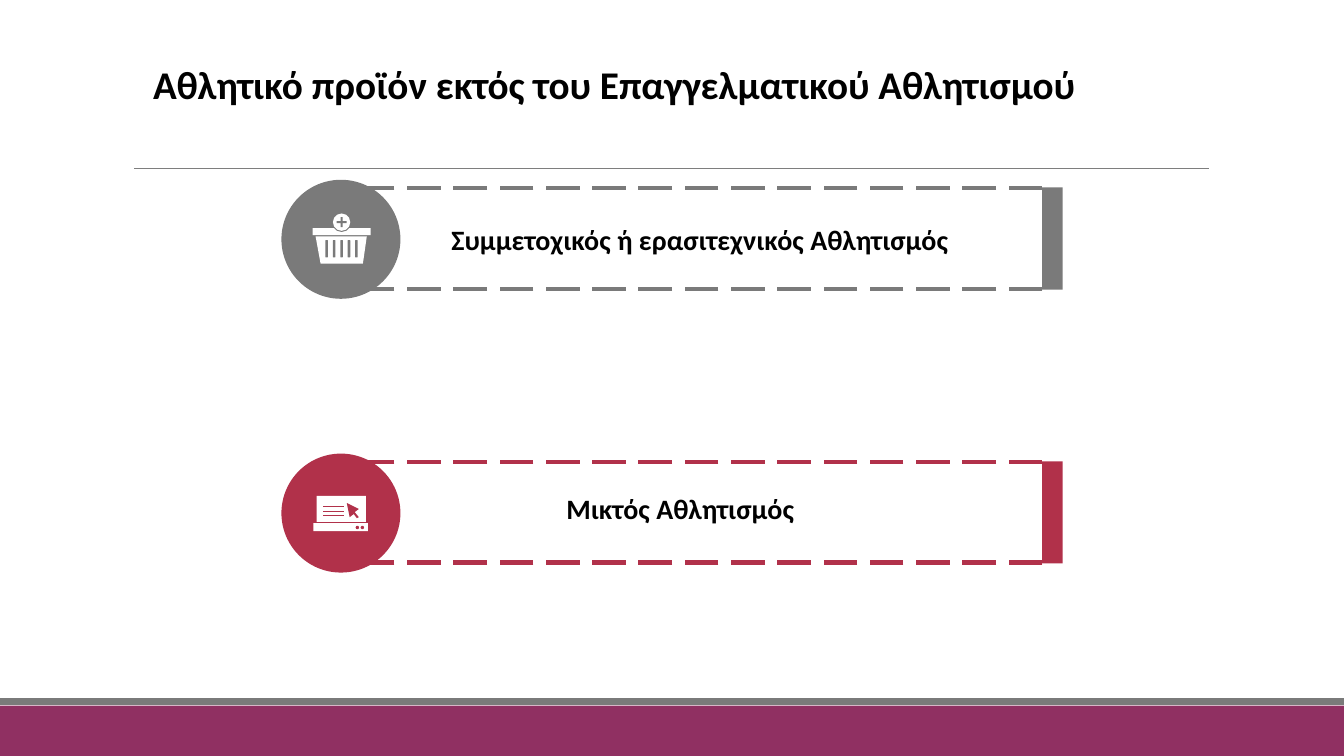
import pptx
import pptx.util
import pptx.dml.color
import pptx.enum.dml
import pptx.enum.shapes
import pptx.enum.text
import pptx.oxml

Pt = pptx.util.Pt
RGB = pptx.dml.color.RGBColor
Kind = pptx.enum.shapes.MSO_SHAPE

BLACK = RGB(0x00, 0x00, 0x00)
WHITE = RGB(0xFF, 0xFF, 0xFF)
GRAY = RGB(0x7A, 0x7A, 0x7A)
RULE = RGB(0x7E, 0x7E, 0x7E)
RED = RGB(0xB1, 0x31, 0x4A)
PLUM = RGB(0x90, 0x30, 0x62)


class Page:
    def __init__(self, slide, font):
        self.shapes = slide.shapes
        self.font = font

    def paint(self, shape, color):
        shape.shadow.inherit = False
        shape.fill.solid()
        shape.fill.fore_color.rgb = color
        shape.line.fill.background()
        return shape

    def block(self, x, y, w, h, color, kind=Kind.RECTANGLE):
        shape = self.shapes.add_shape(kind, Pt(x), Pt(y), Pt(w), Pt(h))
        return self.paint(shape, color)

    def disc(self, x, y, radius, color):
        """Circle given by its centre."""
        return self.block(x - radius, y - radius, 2 * radius, 2 * radius,
                          color, Kind.OVAL)

    def outline(self, points, color):
        start, *rest = [(Pt(x), Pt(y)) for x, y in points]
        maker = self.shapes.build_freeform(*start, scale=1.0)
        maker.add_line_segments(rest, close=True)
        return self.paint(maker.convert_to_shape(), color)

    def line(self, x1, x2, y, color, width, dash=None):
        link = self.shapes.add_connector(
            pptx.enum.shapes.MSO_CONNECTOR.STRAIGHT,
            Pt(x1), Pt(y), Pt(x2), Pt(y))
        link.line.color.rgb = color
        link.line.width = Pt(width)
        if dash:
            link.line.dash_style = dash
        props = link._element.spPr
        props.append(pptx.oxml.parse_xml(
            '<a:effectLst xmlns:a='
            '"http://schemas.openxmlformats.org/drawingml/2006/main"/>'))

    def text(self, words, *, x, y, w, h, size, color=BLACK, bold=True,
             space=0):
        box = self.shapes.add_textbox(Pt(x), Pt(y), Pt(w), Pt(h))
        frame = box.text_frame
        frame.word_wrap = True
        frame.margin_left = frame.margin_right = 0
        frame.margin_top = frame.margin_bottom = 0
        frame.vertical_anchor = pptx.enum.text.MSO_ANCHOR.MIDDLE
        run = frame.paragraphs[0].add_run()
        run.text = words
        run.font.name = self.font
        run.font.size = Pt(size)
        run.font.bold = bold
        run.font.color.rgb = color
        if space:
            run._r.get_or_add_rPr().set("spc", str(space))

    def band(self, top, color):
        """Dashed band with a round badge and an end bar."""
        left, right, height = 262.8, 744.5, 72
        self.block(right, top - 0.3, 14.5, height + 1, color)
        self.disc(243.5, top + 36.7, 42.5, color)
        for y in (top, top + height):
            self.line(right, left, y, color, 3,
                      pptx.enum.dml.MSO_LINE.LONG_DASH)

    def basket(self, top, color):
        mid = 244
        self.outline([(225.4, top + 34.6), (262, top + 34.6),
                      (259.2, top + 54.1), (229, top + 54.1)], WHITE)
        for i in range(5):
            self.block(232.5 + 5.3 * i, top + 37.4, 1.8, 12.2, color,
                       Kind.ROUNDED_RECTANGLE)
        self.block(mid - 20.7, top + 28.8, 41.4, 5, WHITE)
        self.disc(mid, top + 24.5, 7, color)
        self.disc(mid, top + 24.5, 6.2, WHITE)
        plus = self.block(mid - 3.6, top + 20.9, 7.2, 7.2, color, Kind.CROSS)
        plus.adjustments[0] = 0.4

    def laptop(self, top, color):
        self.block(226.1, top + 24.4, 35.3, 18.7, WHITE)
        self.block(223.9, top + 43.9, 38.9, 5.7, WHITE)
        for x in (255.2, 258.8):
            self.disc(x, top + 47, 1.2, color)
        for i in range(3):
            self.line(231, 246, top + 31.7 + 3.3 * i, color, 0.25)
        self.outline([(247.7, top + 29.5), (256.3, top + 33.8),
                      (253.4, top + 36), (256.3, top + 39.6),
                      (254.9, top + 40.3), (252.7, top + 37.4),
                      (249.8, top + 39.6)], color)


def main():
    deck = pptx.Presentation()
    deck.slide_width, deck.slide_height = Pt(960), Pt(540)
    page = Page(deck.slides.add_slide(deck.slide_layouts[6]), "Calibri")

    # Footer
    page.block(0, 504, 960, 36, PLUM)
    page.block(0, 498.6, 960, 5, GRAY)

    # Title and two-part rule
    for start, end in ((744, 863.6), (96, 746.6)):
        page.line(start, end, 120, RULE, 0.5)
    page.text("Αθλητικό προϊόν εκτός του Επαγγελματικού Αθλητισμού",
              x=109.3, y=42.9, w=760, h=34, size=28)

    # Bands with icons and labels
    bands = [
        (134.2, GRAY, page.basket, "Συμμετοχικός ή ερασιτεχνικός Αθλητισμός",
         322.4, 170.6, 7),
        (329.8, RED, page.laptop, "Μικτός Αθλητισμός", 404.5, 363.3, 5),
    ]
    for top, color, icon, label, x, mid, space in bands:
        page.band(top, color)
        icon(top, color)
        page.text(label, x=x, y=mid - 15, w=740 - x, h=30, size=20,
                  space=space)

    deck.save("out.pptx")


if __name__ == "__main__":
    main()
